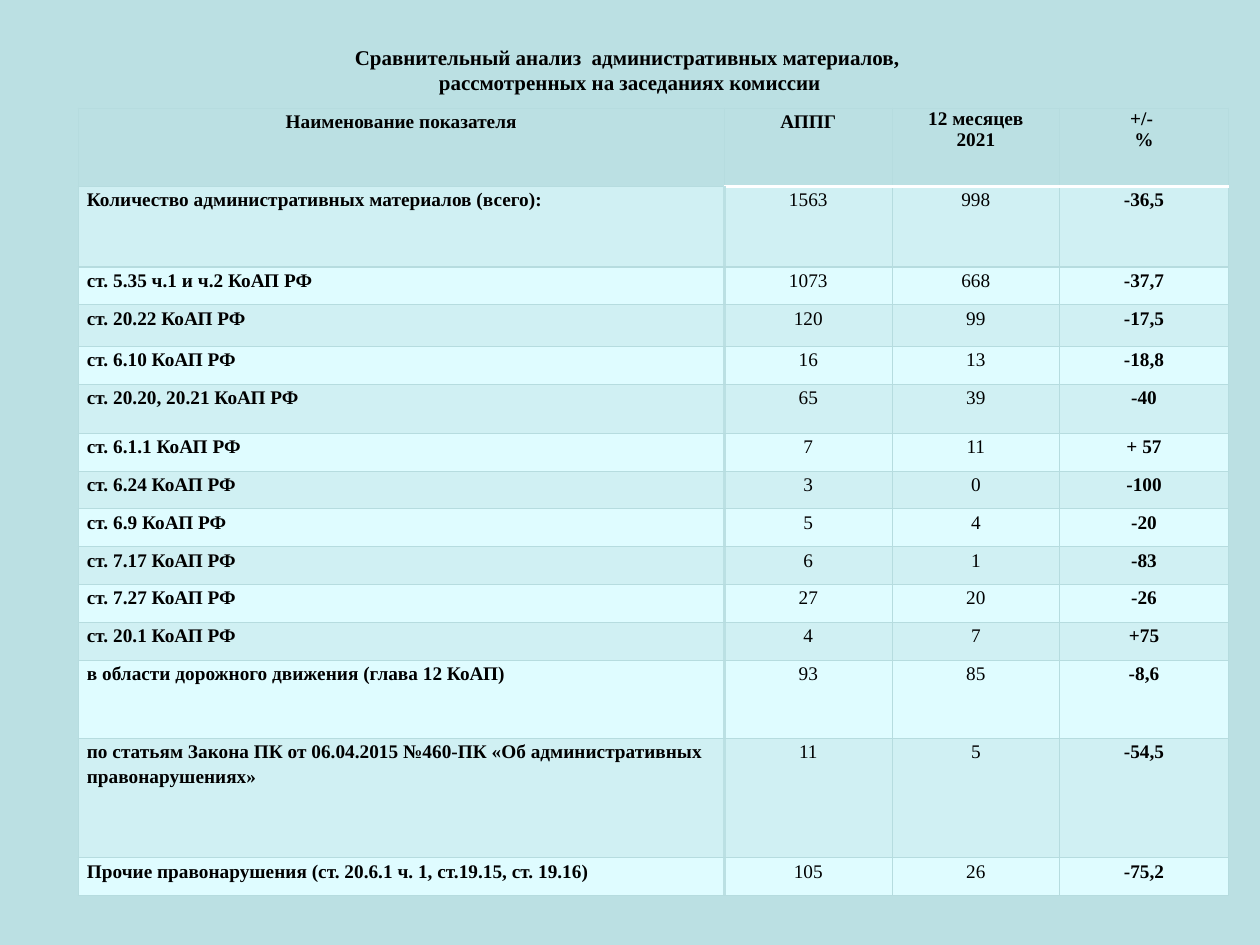
from lxml import etree
from pptx import Presentation, util as u
from pptx.dml.color import RGBColor
from pptx.enum import text
from pptx.oxml.ns import qn

COLORS = {"bg": "BBE0E3", "band": "D0F0F3", "light": "DFFCFF",
          "grid": "B6DCDF", "white": "FFFFFF", "text": "000000"}
FONT = "Times New Roman"
ALIGN = text.PP_ALIGN

header = [["Наименование показателя"], ["АППГ"],
          ["12 месяцев", "2021"], ["+/- ", "%"]]
# Row height, indicator, previous year, current year, change
body = [
    (0.64, "Количество административных материалов (всего):", "1563", "998", "-36,5"),
    (0.3, "ст. 5.35 ч.1 и ч.2 КоАП РФ", "1073", "668", "-37,7"),
    (0.33, "ст. 20.22 КоАП РФ", "120", "99", "-17,5"),
    (0.3, "ст. 6.10 КоАП РФ", "16", "13", "-18,8"),
    (0.39, "ст. 20.20, 20.21 КоАП РФ", "65", "39", "-40"),
    (0.3, "ст. 6.1.1 КоАП РФ", "7", "11", "+ 57"),
    (0.3, "ст. 6.24 КоАП РФ", "3", "0", "-100"),
    (0.3, "ст. 6.9 КоАП РФ", "5", "4", "-20"),
    (0.3, "ст. 7.17 КоАП РФ", "6", "1", "-83"),
    (0.3, "ст. 7.27 КоАП РФ", "27", "20", "-26"),
    (0.3, "ст. 20.1 КоАП РФ", "4", "7", "+75"),
    (0.62, "в области дорожного движения (глава 12 КоАП)", "93", "85", "-8,6"),
    (0.95, "по статьям Закона ПК от 06.04.2015 №460-ПК "
           "«Об административных правонарушениях»", "11", "5", "-54,5"),
    (0.3, "Прочие правонарушения (ст. 20.6.1 ч. 1, ст.19.15, ст. 19.16)",
     "105", "26", "-75,2"),
]
left_aligned = (2, 13)  # table rows whose indicator is not justified
widths = [5.13, 1.33, 1.33, 1.34]
heights = [0.62] + [row[0] for row in body]
rows = [header] + [[[value] for value in row[1:]] for row in body]


def add_run(p, words, size, bold=True):
    r = p.add_run()
    r.text = words
    r.font.name, r.font.size, r.font.bold = FONT, u.Pt(size), bold
    r.font.color.rgb = RGBColor.from_string(COLORS["text"])


def add_border(cell, side, color, points):
    ln = etree.SubElement(cell._tc.get_or_add_tcPr(), qn("a:ln" + side),
                          w=str(u.Pt(points)))
    fill = etree.SubElement(ln, qn("a:solidFill"))
    etree.SubElement(fill, qn("a:srgbClr"), val=COLORS[color])


prs = Presentation()
prs.slide_width, prs.slide_height = u.Inches(10), u.Inches(7.5)
s = prs.slides.add_slide(prs.slide_layouts[5])
s.background.fill.solid()
s.background.fill.fore_color.rgb = RGBColor.from_string(COLORS["bg"])

# Title
title = s.shapes.title
title.left, title.width = int(prs.slide_width * 0.05), int(prs.slide_width * 0.9)
title.top, title.height = int(prs.slide_height * 0.04), u.Inches(1.25)
tf = title.text_frame
tf.auto_size = text.MSO_AUTO_SIZE.NONE
tf.vertical_anchor = text.MSO_ANCHOR.TOP
p = tf.paragraphs[0]
p.alignment = ALIGN.CENTER
add_run(p, "Сравнительный анализ  административных материалов, ", 12)
p.add_line_break()
add_run(p, "рассмотренных на заседаниях комиссии", 12)

# Table grid
table = s.shapes.add_table(len(rows), len(widths), u.Inches(0.62), u.Inches(0.86),
                           u.Inches(sum(widths)), u.Inches(sum(heights))).table
for column, width in zip(table.columns, widths):
    column.width = u.Inches(width)
for row, height in zip(table.rows, heights):
    row.height = u.Inches(height)

# Cells
for i, row in enumerate(rows):
    for j, lines in enumerate(row):
        cell = table.cell(i, j)
        cell.margin_left = cell.margin_right = u.Inches(0.07)
        cell.margin_top = cell.margin_bottom = 0

        # Heavy rules under the header and beside the first column
        edges = {side: ("grid", 0.75) for side in "LRTB"}
        if j > 0 and i < 2:
            edges["B" if i == 0 else "T"] = ("white", 2)
        if i > 0 and j < 2:
            edges["R" if j == 0 else "L"] = ("bg", 2)
        for side, (color, points) in edges.items():
            add_border(cell, side, color, points)

        shade = "bg" if i == 0 else "band" if i % 2 else "light"
        cell.fill.solid()
        cell.fill.fore_color.rgb = RGBColor.from_string(COLORS[shade])

        tf = cell.text_frame
        for k, line in enumerate(lines):
            p = tf.paragraphs[0] if k == 0 else tf.add_paragraph()
            if i == 0 or j > 0:
                p.alignment = ALIGN.CENTER
            else:
                p.alignment = ALIGN.LEFT if i in left_aligned else ALIGN.JUSTIFY
            if len(lines) == 1:
                p.line_spacing, p.space_after = 1.15, u.Pt(10)
            add_run(p, line, 11, bold=i == 0 or j in (0, 3))

prs.save("out.pptx")
